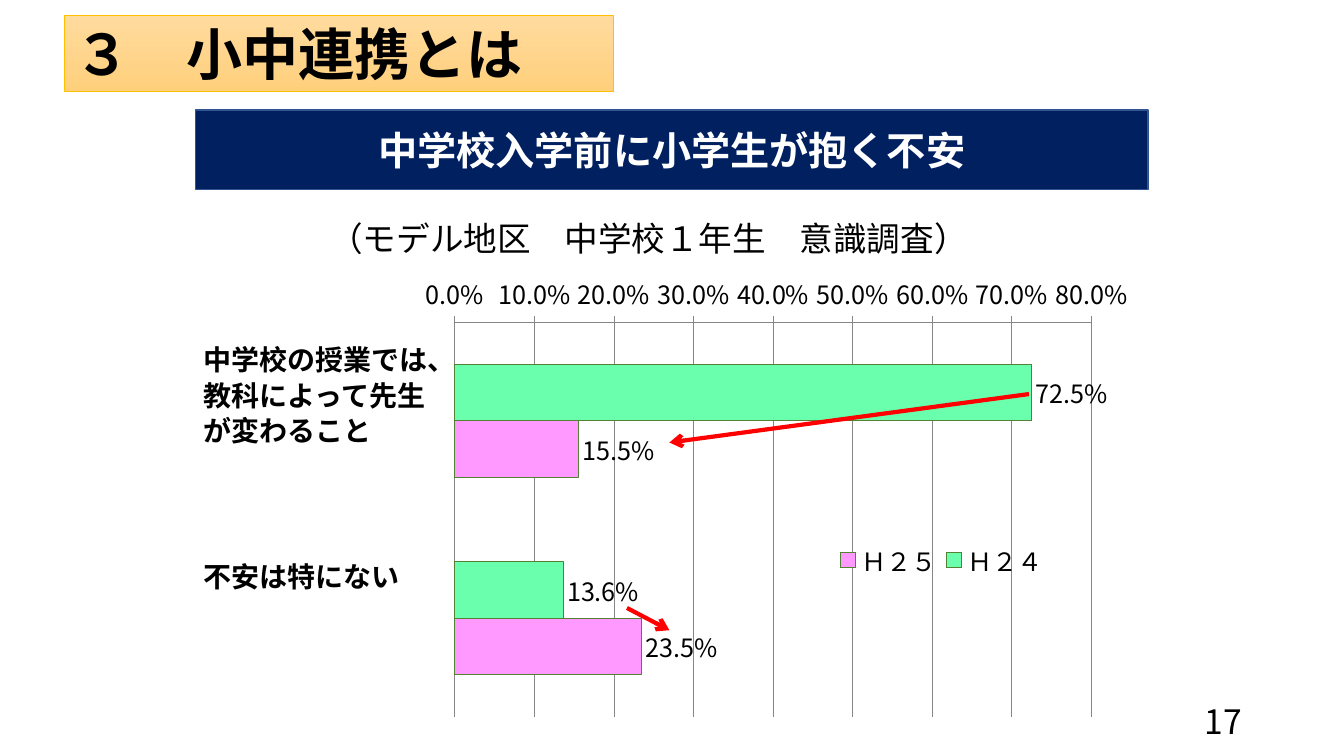
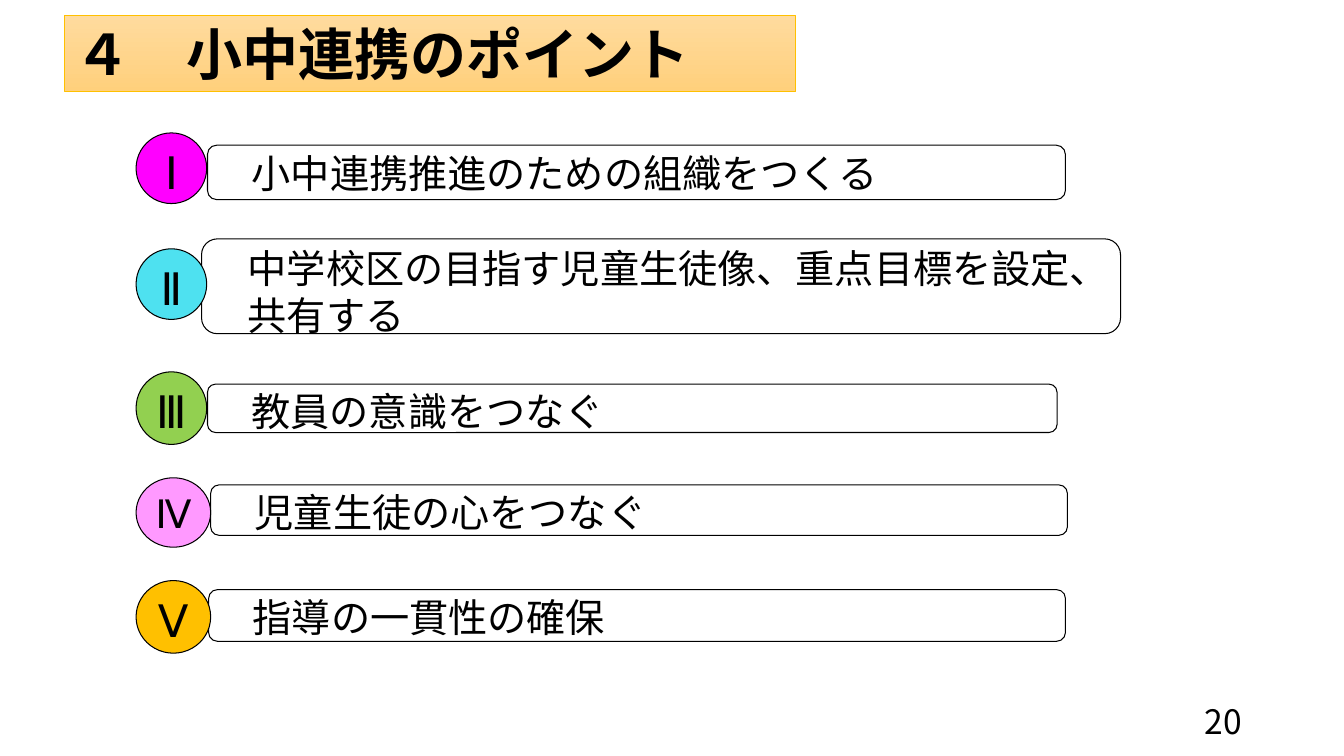
from lxml import etree
from pptx import Presentation
from pptx import util as u
from pptx.chart.data import CategoryChartData
from pptx.dml.color import RGBColor
from pptx.enum import chart as ch, shapes as sh, text as tx
from pptx.oxml.ns import qn

Cm, Pt = u.Cm, u.Pt
LEFT, MID, RIGHT = tx.PP_ALIGN.LEFT, tx.PP_ALIGN.CENTER, tx.PP_ALIGN.RIGHT
TOP, CENTER = tx.MSO_ANCHOR.TOP, tx.MSO_ANCHOR.MIDDLE
WIDE, SLIM = (0.25, 0.13), (0.2, 0.03)
BLACK, WHITE, RED, GREY = "000000", "FFFFFF", "FF0000", "868686"
NAVY, GOLD, PINK, MINT = "002060", "FFC000", "FF99FF", "69FFAD"


def tint(code):
    return RGBColor.from_string(code)


def place(box, at):
    box.left, box.top, box.width, box.height = (Cm(n) for n in at)


def layout(part, index, target, **sizes):
    """Fix the place of a chart part, as fractions of the chart."""
    for old in part.findall(qn("c:layout")):
        part.remove(old)
    node = etree.Element(qn("c:layout"))
    part.insert(index, node)
    manual = etree.SubElement(node, qn("c:manualLayout"))
    if target:
        etree.SubElement(manual, qn("c:layoutTarget"), val=target)
    for key in ("xMode", "yMode"):
        etree.SubElement(manual, qn("c:" + key), val="edge")
    for key, val in sizes.items():
        etree.SubElement(manual, qn("c:" + key), val=str(val))


class Deck:
    face = "Noto Sans CJK JP"
    serif = "TeX Gyre Schola"

    def __init__(self):
        self.show = Presentation()
        self.show.slide_width, self.show.slide_height = Cm(33.87), Cm(19.05)
        self.page = None

    def font(self, font, size, color=BLACK, bold=False, face=None):
        font.size, font.bold = Pt(size), bold
        font.color.rgb = tint(color)
        font.name = face or self.face
        etree.SubElement(font._rPr, qn("a:ea"), typeface=font.name)

    def label(self, box, words, size, color=BLACK, bold=False, face=None,
              align=LEFT, anchor=TOP, pad=WIDE, indent=0):
        """Fill a shape with one paragraph per line and return the paragraphs."""
        frame = box.text_frame
        frame.text = words
        frame.word_wrap = True
        frame.auto_size = tx.MSO_AUTO_SIZE.NONE
        frame.vertical_anchor = anchor
        frame.margin_left = Cm(pad[0] + indent)
        frame.margin_right = Cm(pad[0])
        frame.margin_top = frame.margin_bottom = Cm(pad[1])
        for para in frame.paragraphs:
            para.alignment = align
            self.font(para.font, size, color, bold, face)
        return frame.paragraphs

    def slide(self, title, width, number):
        self.page = self.show.slides.add_slide(self.show.slide_layouts[5])
        head = self.page.shapes.title
        place(head, (1.63, 0.38, width, 1.93))
        head.fill.gradient()
        head.fill.gradient_angle = 270
        for stop, code in zip(head.fill.gradient_stops, ("FFDB9E", "FFD07C")):
            stop.color.rgb = tint(code)
        head.line.color.rgb = tint(GOLD)
        head.line.width = Pt(0.5)
        self.label(head, title, 40, bold=True, anchor=CENTER)
        self.text((23.93, 17.65, 7.62, 1.02), number, 24,
                  align=RIGHT, anchor=CENTER)

    def text(self, at, words, size, **style):
        box = self.page.shapes.add_textbox(*(Cm(n) for n in at))
        return self.label(box, words, size, **style)

    def shape(self, kind, at, fill, line, weight, words, size, group=None, **style):
        home = group or self.page
        box = home.shapes.add_shape(kind, *(Cm(n) for n in at))
        box.shadow.inherit = False
        box.fill.solid()
        box.fill.fore_color.rgb = tint(fill)
        box.line.color.rgb = tint(line)
        box.line.width = Pt(weight)
        return self.label(box, words, size, **style)

    def point(self, mark, fill, disc, bar, words, size=32):
        """Draw a numeral disc and its rounded bar as one group."""
        group = self.page.shapes.add_group_shape()
        kind = sh.MSO_SHAPE
        self.shape(kind.ROUNDED_RECTANGLE, bar, WHITE, BLACK, 0.75, words, 28,
                   group=group, pad=SLIM, indent=0.85)
        paras = self.shape(kind.OVAL, disc, fill, BLACK, 0.75, mark, size,
                           group=group, pad=SLIM, face=self.serif, align=MID)
        paras[0].space_before = Pt(3.5)

    def arrow(self, *ends):
        line = self.page.shapes.add_connector(
            sh.MSO_CONNECTOR.STRAIGHT, *(Cm(n) for n in ends))
        line.line.color.rgb = tint(RED)
        line.line.width = Pt(3)
        etree.SubElement(line.line._get_or_add_ln(), qn("a:tailEnd"), type="arrow")
        etree.SubElement(line._element.spPr, qn("a:effectLst"))

    def bars(self, at, cats, series):
        """Draw a bar chart; series holds name, colour and values."""
        data = CategoryChartData(number_format="0.0%")
        data.categories = cats
        for name, _, vals in series:
            data.add_series(name, vals)
        chart = self.page.shapes.add_chart(
            ch.XL_CHART_TYPE.BAR_CLUSTERED, *(Cm(n) for n in at), data).chart
        self.font(chart.font, 18)
        chart.has_title = False

        chart.category_axis.reverse_order = True
        chart.category_axis.visible = False
        axis = chart.value_axis
        axis.minimum_scale, axis.maximum_scale, axis.major_unit = 0, 0.8, 0.1
        axis.major_tick_mark = ch.XL_TICK_MARK.OUTSIDE
        axis.tick_labels.number_format = "0.0%"
        axis.tick_labels.number_format_is_linked = False
        for line in (axis.format.line, axis.major_gridlines.format.line):
            line.color.rgb = tint(GREY)
            line.width = Pt(0.75)

        plot = chart.plots[0]
        plot.gap_width, plot.overlap = 150, 0
        plot.vary_by_categories = False
        plot.has_data_labels = True
        tags = plot.data_labels
        tags.show_value = True
        tags.number_format, tags.number_format_is_linked = "0.0%", False
        tags.position = ch.XL_LABEL_POSITION.OUTSIDE_END
        for item, (_, color, _) in zip(plot.series, series):
            item.format.fill.solid()
            item.format.fill.fore_color.rgb = tint(color)
            item.format.line.color.rgb = tint("548235")
            item.format.line.width = Pt(0.75)

        chart.has_legend = True
        chart.legend.position = ch.XL_LEGEND_POSITION.TOP
        chart.legend.include_in_layout = False
        root = chart.element
        layout(root.find(".//" + qn("c:plotArea")), 0, "inner",
               x=0.27, y=0.12, w=0.66, h=0.83)
        layout(root.find(".//" + qn("c:legend")), 1, None,
               x=0.66, y=0.57, w=0.23, h=0.1)


def survey(deck):
    deck.slide("３　小中連携とは", 13.84, "17")
    deck.bars((4.9, 6.68, 24.31, 11.99), ("1", "2"),
              (("Ｈ２４", MINT, (0.725, 0.136)),
               ("Ｈ２５", PINK, (0.155, 0.235))))
    paras = deck.text(
        (4.93, 8.55, 6.81, 8), "中学校の授業では、\n教科によって先生\nが変わること\n不安は特にない",
        20, bold=True, pad=SLIM)
    for para in paras[:3]:
        para.line_spacing = 1.06
    paras[3].space_before = Pt(80)
    deck.text((8.05, 5.36, 18.01, 1.27),
              "（モデル地区　中学校１年生　意識調査）", 24)
    deck.arrow(25.93, 9.93, 16.87, 11.15)
    deck.arrow(15.8, 15.32, 16.87, 15.88)
    deck.shape(sh.MSO_SHAPE.RECTANGLE, (4.93, 2.77, 24, 2.01), NAVY, "325491", 1,
               "中学校入学前に小学生が抱く不安", 28, color=WHITE, bold=True,
               align=MID, anchor=CENTER)


def points(deck):
    deck.slide("４　小中連携のポイント", 18.42, "20")
    deck.point("Ⅰ", "FF00FF", (3.43, 3.35, 1.78, 1.78), (5.23, 3.66, 21.62, 1.37),
               "小中連携推進のための組織をつくる")
    deck.point("Ⅱ", "4EE1F0", (3.43, 6.27, 1.78, 1.78), (5.08, 6.02, 23.16, 2.39),
               "中学校区の目指す児童生徒像、重点目標を設定、\n共有する")
    deck.point("Ⅲ", "92D050", (3.43, 9.37, 1.78, 1.83), (5.23, 9.68, 21.41, 1.22),
               "教員の意識をつなぐ")
    deck.point("Ⅳ", PINK, (3.43, 12.04, 1.88, 1.75), (5.31, 12.22, 21.59, 1.27),
               "児童生徒の心をつなぐ", 28)
    deck.point("Ⅴ", GOLD, (3.43, 14.63, 1.88, 1.83), (5.26, 14.86, 21.59, 1.3),
               "指導の一貫性の確保")


def main():
    deck = Deck()
    survey(deck)
    points(deck)
    deck.show.save("out.pptx")


if __name__ == "__main__":
    main()
